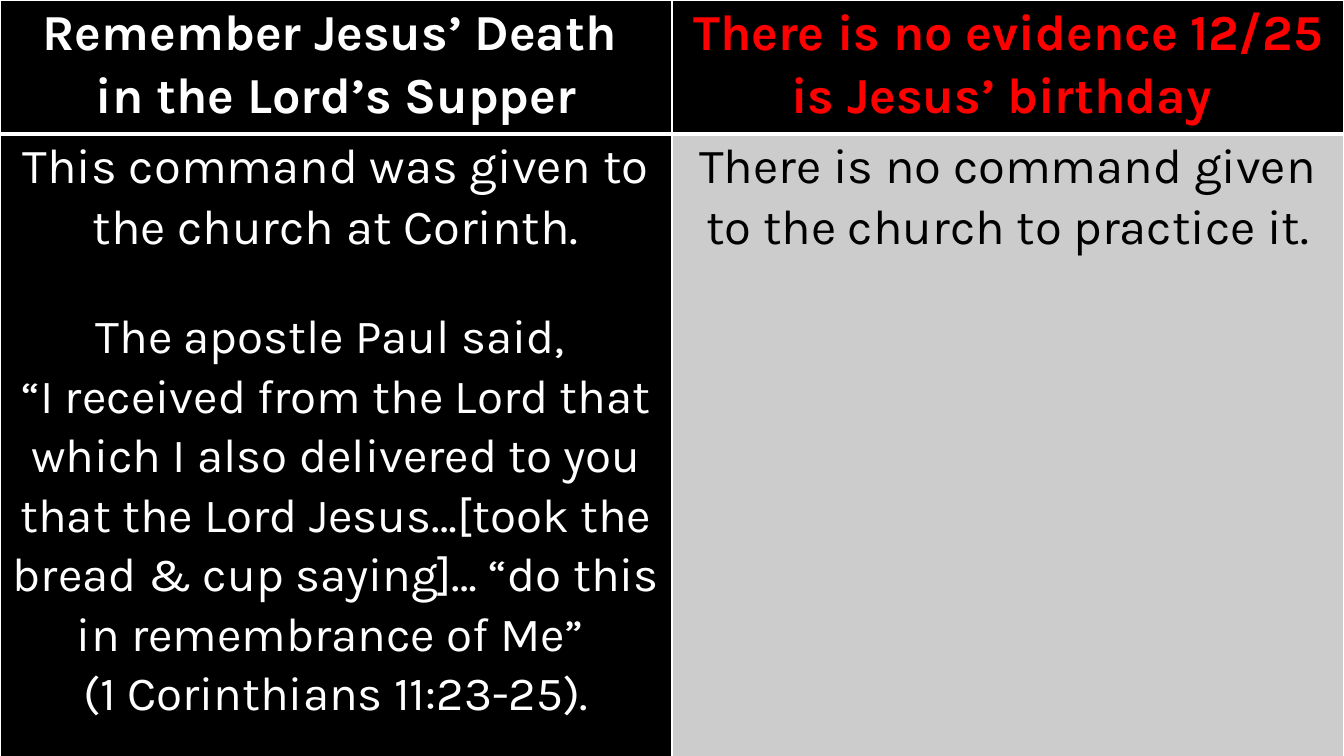
import lxml.etree
import pptx
import pptx.dml.color
import pptx.enum.text
import pptx.oxml.ns
import pptx.util

Inches = pptx.util.Inches
Pt = pptx.util.Pt
RGBColor = pptx.dml.color.RGBColor

BLACK = RGBColor(0x00, 0x00, 0x00)
WHITE = RGBColor(0xFF, 0xFF, 0xFF)
RED = RGBColor(0xFF, 0x00, 0x00)
GREY = RGBColor(0xCC, 0xCC, 0xCC)

FONT = "Karla"
SLIDE_WIDTH = Inches(13.33)
HEADER_HEIGHT = Inches(1.33)
BODY_HEIGHT = Inches(6.67)

# Each cell: fill, text colour, bold, and paragraphs of (text, size, space before)
HEADERS = [
    (BLACK, WHITE, True, [
        ("Remember Jesus’ Death ", 36, 0),
        ("in the Lord’s Supper", 36, 0),
    ]),
    (BLACK, RED, True, [
        ("There is no evidence 12/25 is Jesus’ birthday ", 36, 0),
    ]),
]
BODIES = [
    (BLACK, WHITE, False, [
        ("This command was given to the church at Corinth.", 35, 0),
        ("The apostle Paul said, ", 34, 35),
        ("“I received from the Lord that which I also delivered to you "
         "that the Lord Jesus…[took the bread & cup saying]… "
         "“do this in remembrance of Me” ", 34, 0),
        ("(1 Corinthians 11:23-25).", 34, 0),
    ]),
    (GREY, BLACK, False, [
        ("There is no command given to the church to practice it.", 35, 0),
    ]),
]
HEADER_BORDERS = {"lnL": 1, "lnR": 1, "lnT": 1, "lnB": 3}
BODY_BORDERS = {"lnL": 1, "lnR": 1, "lnB": 1}


def set_borders(cell, borders):
    """Draw white borders; they must precede the fill in the cell properties."""
    qn = pptx.oxml.ns.qn
    properties = cell._tc.get_or_add_tcPr()
    for position, (side, width) in enumerate(borders.items()):
        line = lxml.etree.Element(qn(f"a:{side}"), w=str(Pt(width)))
        fill = lxml.etree.SubElement(line, qn("a:solidFill"))
        lxml.etree.SubElement(fill, qn("a:srgbClr"), val=str(WHITE))
        properties.insert(position, line)


def write_paragraph(paragraph, text, size, space_before, color, bold):
    paragraph.text = text
    paragraph.alignment = pptx.enum.text.PP_ALIGN.CENTER
    paragraph.line_spacing = 1.07
    paragraph.space_before = Pt(space_before)
    for run in paragraph.runs:
        run.font.name = FONT
        run.font.size = Pt(size)
        run.font.bold = bold
        run.font.color.rgb = color


def fill_cell(cell, content, borders):
    fill_color, text_color, bold, lines = content
    cell.fill.solid()
    cell.fill.fore_color.rgb = fill_color
    cell.margin_left = cell.margin_right = Inches(0.07)
    cell.margin_top = cell.margin_bottom = 0
    text_frame = cell.text_frame
    for index, (text, size, space_before) in enumerate(lines):
        paragraph = text_frame.add_paragraph() if index else text_frame.paragraphs[0]
        write_paragraph(paragraph, text, size, space_before, text_color, bold)
    set_borders(cell, borders)


def add_comparison_table(slide):
    frame = slide.shapes.add_table(
        2, 2, 0, 0, SLIDE_WIDTH, HEADER_HEIGHT + BODY_HEIGHT)
    table = frame.table
    table.rows[0].height = HEADER_HEIGHT
    table.rows[1].height = BODY_HEIGHT
    rows = [(HEADERS, HEADER_BORDERS), (BODIES, BODY_BORDERS)]
    for row, (contents, borders) in enumerate(rows):
        for column, content in enumerate(contents):
            fill_cell(table.cell(row, column), content, borders)


def main():
    presentation = pptx.Presentation()
    presentation.slide_width = SLIDE_WIDTH
    presentation.slide_height = Inches(7.5)
    slide = presentation.slides.add_slide(presentation.slide_layouts[6])

    # Black background
    background = slide.background.fill
    background.solid()
    background.fore_color.rgb = BLACK

    # Two-column comparison
    add_comparison_table(slide)

    presentation.save("out.pptx")


if __name__ == "__main__":
    main()
